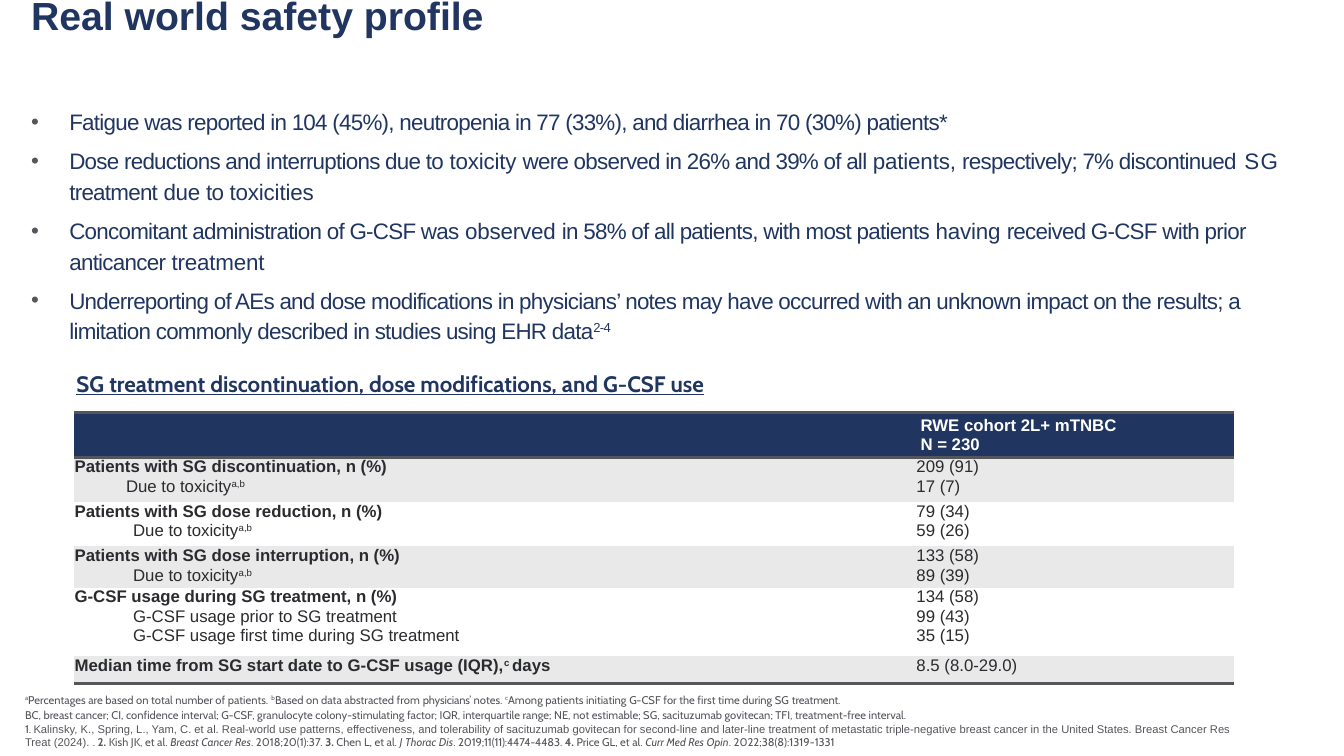
import pptx
import pptx.dml.color
import pptx.enum.text
import pptx.oxml
import pptx.oxml.ns
import pptx.util
from pptx.util import Inches

NAVY = pptx.dml.color.RGBColor(0x20, 0x36, 0x61)
GREY = pptx.dml.color.RGBColor(0x54, 0x56, 0x5B)
INK = pptx.dml.color.RGBColor(0x2A, 0x2B, 0x2E)
BAND = pptx.dml.color.RGBColor(0xE9, 0xE9, 0xEA)
WHITE = pptx.dml.color.RGBColor(0xFF, 0xFF, 0xFF)
ANCHOR = pptx.enum.text.MSO_ANCHOR
NS = pptx.oxml.ns.nsdecls("a")

# A run is a plain string or (text, {options}); these are the recurring options.
BOLD, ITALIC, SUPER = {"bold": True}, {"italic": True}, {"raised": 30}
TIGHT, SNUG = {"spacing": -0.5}, {"spacing": -0.1}


class SafetySlide:
    """Holds the slide and its text styles."""

    def __init__(self, slide):
        self.slide = slide

    def box(self, left, top, width, height, anchor=ANCHOR.TOP):
        frame = self.slide.shapes.add_textbox(
            Inches(left), Inches(top), Inches(width), Inches(height)).text_frame
        frame.word_wrap = True
        frame.vertical_anchor = anchor
        return frame

    def paragraph(self, frame, runs, size, color, face="Arial", bold=False, indent=0,
                  bullet=False, line=None, before=0, after=0):
        first = frame.paragraphs[0]
        para = first if not first.runs else frame.add_paragraph()
        props = para._p.get_or_add_pPr()
        props.set("marL", str(Inches(indent)))
        props.set("indent", str(Inches(-indent if bullet else 0)))
        if line:
            para.line_spacing = line
        if para is not first:
            para.space_before = pptx.util.Pt(before)
        para.space_after = pptx.util.Pt(after)
        if bullet:
            for xml in (f'<a:buClr {NS}><a:srgbClr val="{GREY}"/></a:buClr>',
                        f'<a:buFont {NS} typeface="Arial"/>',
                        f'<a:buChar {NS} char="•"/>'):
                props.append(pptx.oxml.parse_xml(xml))
        para.font.size = pptx.util.Pt(size)
        para.font.name = face
        para.font.bold = bold
        para.font.color.rgb = color
        for item in runs:
            text, options = (item, {}) if isinstance(item, str) else item
            self.run(para, text, **options)
        return para

    def run(self, para, text, spacing=0, raised=0, bold=None, italic=None, face=None):
        run = para.add_run()
        run.text = text
        run.font.bold, run.font.italic = bold, italic
        if face:
            run.font.name = face
        props = run._r.get_or_add_rPr()
        if spacing:
            props.set("spc", str(round(spacing * 100)))
        if raised:
            props.set("baseline", str(raised * 1000))

    def table(self, left, top, widths, heights):
        table = self.slide.shapes.add_table(
            len(heights), len(widths), Inches(left), Inches(top),
            Inches(sum(widths)), Inches(sum(heights))).table
        for column, width in zip(table.columns, widths):
            column.width = Inches(width)
        for row, height in zip(table.rows, heights):
            row.height = Inches(height)
        return table

    def cell(self, cell, fill, ruled_sides=()):
        """Fill a cell, clear its margins and rule the named sides."""
        cell.margin_left = cell.margin_right = cell.margin_top = cell.margin_bottom = 0
        props = cell._tc.get_or_add_tcPr()
        for side in ("L", "R", "T", "B"):
            paint = (f'<a:solidFill><a:srgbClr val="{GREY}"/></a:solidFill>'
                     if side in ruled_sides else "<a:noFill/>")
            props.append(pptx.oxml.parse_xml(f'<a:ln{side} {NS} w="25400">{paint}</a:ln{side}>'))
        cell.fill.solid()
        cell.fill.fore_color.rgb = fill
        return cell.text_frame


FINDINGS = [
    [("Fatigue was reported in 104 (45%), neutropenia in 77 (33%), and diarrhea in 70 (30%) patients*", TIGHT)],
    [("Dose reductions and interruptions due to ", TIGHT), ("toxicity ", SNUG),
     ("were observed in 26% and 39% of all ", TIGHT), ("patients, ", SNUG),
     ("respectively; 7% discontinued", TIGHT), (" SG ", {"spacing": 1.1}),
     ("treatment ", TIGHT), ("due ", {"spacing": -0.2}), ("to ", TIGHT), ("toxicities", SNUG)],
    [("Concomitant administration of G-CSF was ", TIGHT), ("observed ", SNUG),
     ("in 58% of all patients, with most patients ", TIGHT), ("having ", SNUG),
     ("received G-CSF with prior anticancer ", TIGHT), ("treatment", SNUG)],
    [("Underreporting of AEs and dose modifications in physicians’ notes may have occurred with an "
      "unknown impact on the results; a limitation commonly described in studies using EHR data", TIGHT),
     ("2-4", {"spacing": -0.5, "raised": 30})],
]

DUE_TO_TOXICITY = ["Due to toxicity", ("a,b", SUPER)]
# Row height, heading, indent of the sub-rows, sub-rows, values
OUTCOMES = [
    (0.44, ["Patients with SG discontinuation, n (%)"], 0.52, [DUE_TO_TOXICITY], ["209 (91)", "17 (7)"]),
    (0.44, ["Patients with SG dose reduction, n (%)"], 0.59, [DUE_TO_TOXICITY], ["79 (34)", "59 (26)"]),
    (0.41, ["Patients with SG dose interruption, n (%)"], 0.59, [DUE_TO_TOXICITY], ["133 (58)", "89 (39)"]),
    (0.68, ["G-CSF usage during SG treatment, n (%)"], 0.59,
     [["G-CSF usage prior to SG treatment"], ["G-CSF usage ﬁrst time during SG treatment"]],
     ["134 (58)", "99 (43)", "35 (15)"]),
    (0.27, ["Median time from SG start date to G-CSF usage (IQR),", ("c ", SUPER), "days"], 0, [],
     ["8.5 (8.0-29.0)"]),
]

NOTE_MARK = {"raised": 33}
# Space before, runs
FOOTNOTES = [
    (0, [("a", NOTE_MARK), "Percentages are based on total number of patients. ", ("b", NOTE_MARK),
         "Based on data abstracted from ", ("physicians’ ", SNUG), "notes. ", ("c", NOTE_MARK),
         "Among patients initiating ", ("G-", SNUG), "CSF for the first time during SG ",
         ("treatment.", SNUG)]),
    (1.4, ["BC, breast cancer; CI, confidence interval; G-CSF, granulocyte colony-stimulating factor; "
           "IQR, interquartile range; NE, not estimable; SG, sacituzumab govitecan; "
           "TFI, treatment-free interval."]),
    (0, [("1. ", SNUG),
         ("Kalinsky, K., Spring, L., Yam, C. et al. Real-world use patterns, effectiveness, and "
          "tolerability of sacituzumab govitecan for second-line and later-line treatment of metastatic "
          "triple-negative breast cancer in the United States. Breast Cancer Res Treat (2024). ",
          {"face": "Arial"}),
         ". ", ("2. ", BOLD), "Kish JK, et al. ", ("Breast Cancer Res", ITALIC), ". 2018;20(1):37. ",
         ("3", BOLD), (". ", BOLD), "Chen L, et al. ", ("J Thorac Dis", ITALIC), ". ",
         ("2019;11(11):4474-4483. ", SNUG), ("4", BOLD), (". ", BOLD), "Price GL, et al. ",
         ("Curr Med Res Opin", ITALIC), ". 2022;38(8):1319-", ("1331", SNUG)]),
]


def main():
    deck = pptx.Presentation()
    deck.slide_width, deck.slide_height = Inches(13.33), Inches(7.5)
    page = SafetySlide(deck.slides.add_slide(deck.slide_layouts[6]))

    title = page.box(0.21, -0.17, 12, 1.08, ANCHOR.BOTTOM)
    title.margin_bottom = Inches(0.52)
    page.paragraph(title, ["Real world safety profile"], 28, NAVY, bold=True, line=0.9)

    findings = page.box(0.21, 0.99, 12.76, 1.94)
    for runs in FINDINGS:
        page.paragraph(findings, runs, 16, NAVY, indent=0.38, bullet=True, line=1.14, after=6)

    table = page.table(0.73, 4.09, [8.36, 3.15], [0.45] + [row[0] for row in OUTCOMES])
    page.cell(table.cell(0, 0), NAVY, "TB")
    cohort = page.cell(table.cell(0, 1), NAVY, "TB")
    table.cell(0, 1).vertical_anchor = ANCHOR.MIDDLE
    for line in ("RWE cohort 2L+ mTNBC", "N = 230"):
        page.paragraph(cohort, [line], 12, WHITE, bold=True, indent=0.04)

    for number, (_, heading, indent, details, values) in enumerate(OUTCOMES, 1):
        fill = BAND if number % 2 else WHITE
        sides = {1: "T", len(OUTCOMES): "B"}.get(number, "")
        label = page.cell(table.cell(number, 0), fill, sides)
        page.paragraph(label, heading, 12, INK, bold=True, indent=0.01)
        for detail in details:
            page.paragraph(label, detail, 12, INK, indent=indent, before=0.5)
        figures = page.cell(table.cell(number, 1), fill, sides)
        for value in values:
            page.paragraph(figures, [value], 12, INK, before=0.5)

    footnotes = page.box(-0.01, 6.83, 12.43, 0.65)
    for before, runs in FOOTNOTES:
        page.paragraph(footnotes, runs, 8, GREY, face="Cabin", indent=0.16, before=before)

    caption = page.box(0.65, 3.64, 10.39, 0.35)
    heading = page.paragraph(caption, ["SG treatment discontinuation, dose modifications, and G-CSF use"],
                             16, NAVY, face="Cabin", bold=True, indent=0.01, line=pptx.util.Pt(17.6))
    heading.font.underline = True

    deck.save("out.pptx")


if __name__ == "__main__":
    main()
